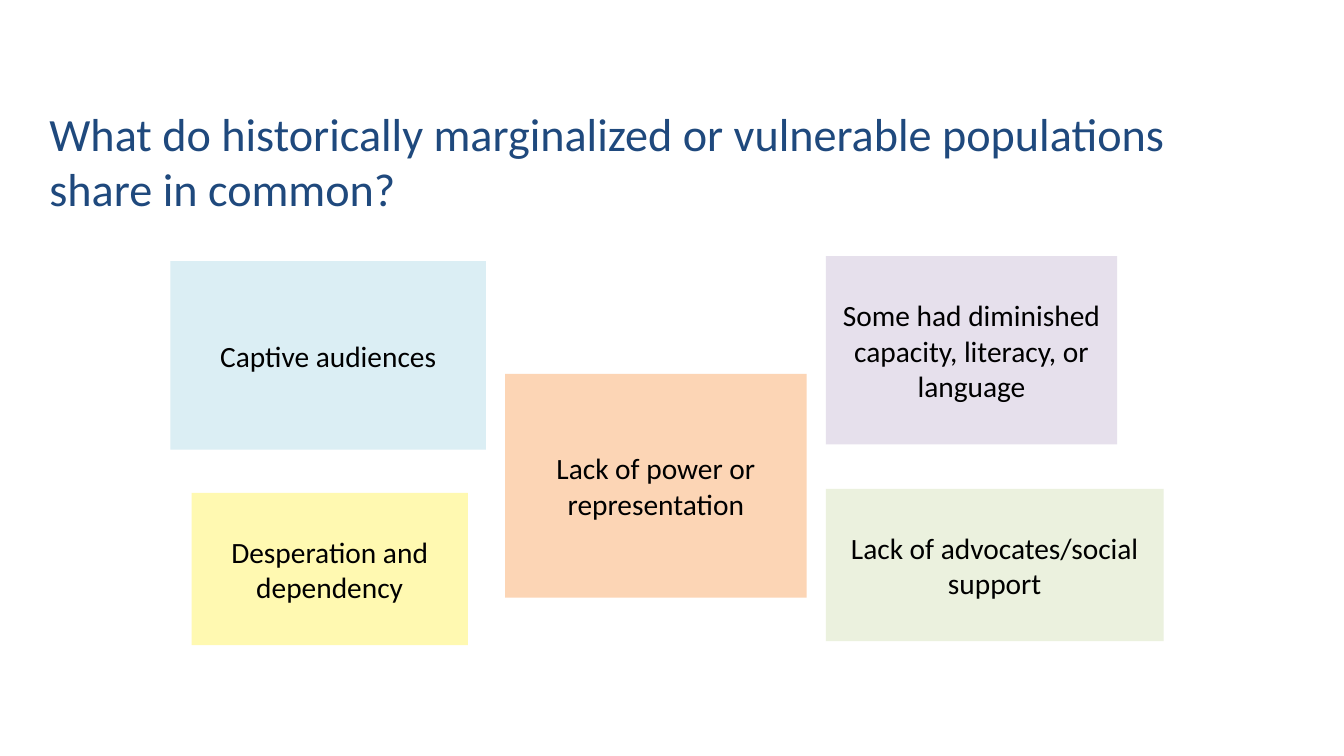
from dataclasses import dataclass

from pptx import Presentation
from pptx.dml.color import RGBColor
from pptx.enum.shapes import MSO_SHAPE
from pptx.enum.text import MSO_ANCHOR, PP_ALIGN
from pptx.slide import Slide
from pptx.text.text import TextFrame
from pptx.util import Inches, Pt

FONT = "Calibri"
COLORS = {
    "title": "1F497D",
    "text": "000000",
    "blue": "DBEEF4",
    "orange": "FCD5B5",
    "purple": "E6E0EC",
    "yellow": "FFF9B1",
    "green": "EBF1DE",
}


@dataclass
class Card:
    left: float
    top: float
    width: float
    height: float
    fill: str
    text: str


CARDS = [
    Card(1.69, 2.59, 3.13, 1.87, "blue", "Captive audiences"),
    Card(5.01, 3.71, 2.99, 2.22, "orange", "Lack of power or representation"),
    Card(8.19, 2.54, 2.89, 1.87, "purple",
         "Some had diminished capacity, literacy, or language"),
    Card(1.9, 4.89, 2.74, 1.51, "yellow", "Desperation and dependency"),
    Card(8.19, 4.85, 3.35, 1.51, "green", "Lack of advocates/social support"),
]


def color(name: str) -> RGBColor:
    return RGBColor.from_string(COLORS[name])


def write(frame: TextFrame, text: str, size: int, ink: str, align: PP_ALIGN) -> None:
    frame.text = text
    frame.word_wrap = True
    frame.vertical_anchor = MSO_ANCHOR.MIDDLE
    line = frame.paragraphs[0]
    line.alignment = align
    font = line.runs[0].font
    font.name = FONT
    font.size = Pt(size)
    font.color.rgb = color(ink)


def add_title(slide: Slide, text: str) -> None:
    title = slide.shapes.title
    title.left, title.top = Inches(0.39), Inches(0.4)
    title.width, title.height = Inches(12.37), Inches(2.38)
    write(title.text_frame, text, 33, "title", PP_ALIGN.LEFT)


def add_card(slide: Slide, card: Card) -> None:
    box = slide.shapes.add_shape(
        MSO_SHAPE.RECTANGLE, Inches(card.left), Inches(card.top),
        Inches(card.width), Inches(card.height))
    box.shadow.inherit = False
    box.fill.solid()
    box.fill.fore_color.rgb = color(card.fill)
    box.line.fill.background()
    write(box.text_frame, card.text, 21, "text", PP_ALIGN.CENTER)


def main() -> None:
    deck = Presentation()
    deck.slide_width, deck.slide_height = Inches(13.33), Inches(7.5)
    slide = deck.slides.add_slide(deck.slide_layouts[5])
    add_title(slide, "What do historically marginalized or vulnerable "
                     "populations share in common?")
    for card in CARDS:
        add_card(slide, card)
    deck.save("out.pptx")


if __name__ == "__main__":
    main()
